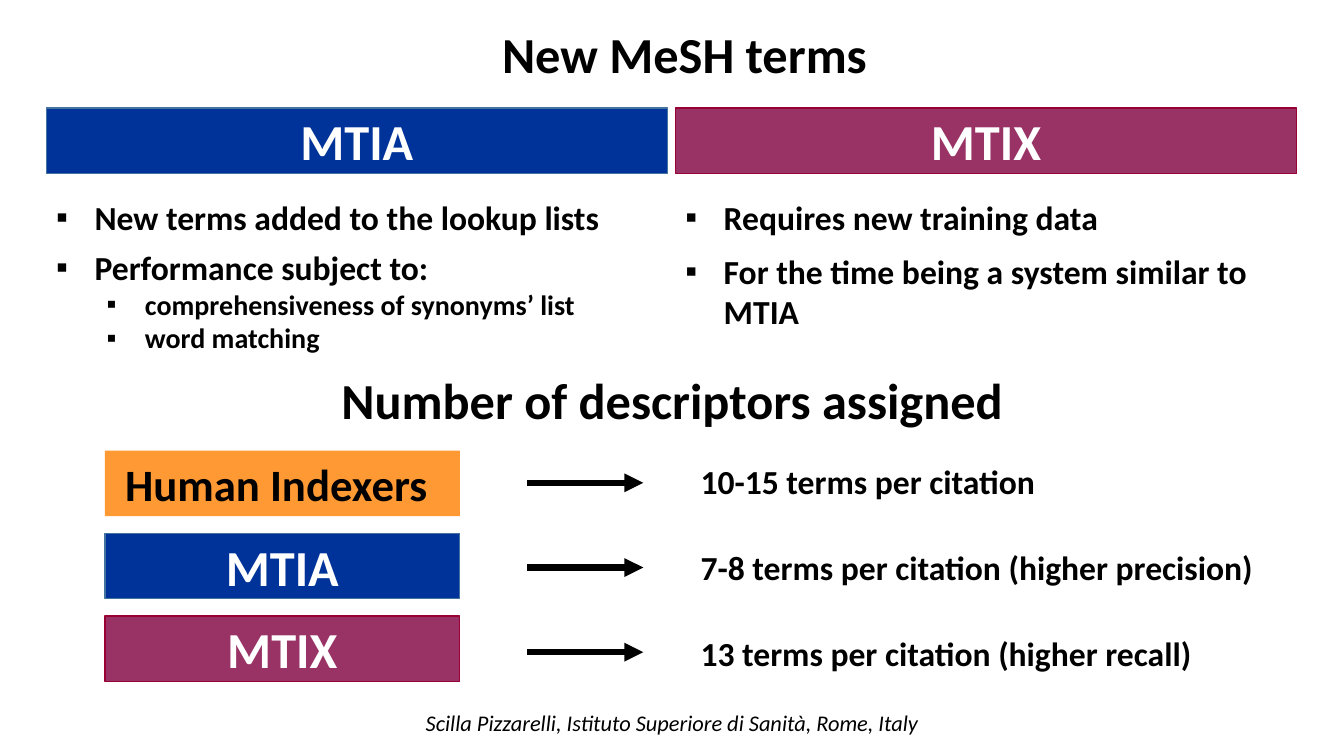
"""Build a slide comparing MTIA and MTIX on new MeSH terms and descriptors."""
from lxml.etree import SubElement
from pptx import Presentation
from pptx.dml.color import RGBColor
from pptx.enum.shapes import MSO_CONNECTOR, MSO_SHAPE
from pptx.enum.text import MSO_ANCHOR, PP_ALIGN
from pptx.oxml.ns import qn
from pptx.util import Inches, Pt

BLACK = RGBColor(0x00, 0x00, 0x00)
WHITE = RGBColor(0xFF, 0xFF, 0xFF)
BLUE = RGBColor(0x00, 0x33, 0x99)
BLUE_EDGE = RGBColor(0x43, 0x73, 0x9E)
PLUM = RGBColor(0x99, 0x33, 0x66)
PLUM_EDGE = RGBColor(0x99, 0x00, 0x33)
ORANGE = RGBColor(0xFF, 0x99, 0x33)

SLIDE_WIDTH, SLIDE_HEIGHT = 13.33, 7.5
MTIA_LEFT, MTIX_LEFT, COLUMN_WIDTH = 0.46, 6.7, 6.16
BAND_TOP, BAND_HEIGHT = 1.07, 0.65
BULLETS_TOP = 1.9
METHOD_LEFT, METHOD_WIDTH = 1.04, 3.52
ARROW_LEFT, ARROW_RIGHT = 5.23, 6.38
COUNT_LEFT, COUNT_WIDTH = 6.85, 6.34
ROWS_TOP, ROW_PITCH = 4.47, 0.82
ARROW_TOP, ARROW_PITCH = 4.79, 0.84
COUNT_TOP, COUNT_PITCH = 4.52, 0.855

METHODS = [
    ("Human Indexers", 32, BLACK, ORANGE, None, "10-15 terms per citation"),
    ("MTIA", 36, WHITE, BLUE, BLUE_EDGE, "7-8 terms per citation (higher precision)"),
    ("MTIX", 36, WHITE, PLUM, PLUM_EDGE, "13 terms per citation (higher recall)"),
]


def inches(*lengths):
    """Convert lengths to slide units."""
    return [Inches(length) for length in lengths]


def write(paragraph, wording, size, color=BLACK, bold=True, italic=False):
    """Add one styled run to a paragraph."""
    run = paragraph.add_run()
    run.text = wording
    run.font.name = "Calibri"
    run.font.size = Pt(size)
    run.font.bold = bold
    run.font.italic = italic
    run.font.color.rgb = color


def add_frame(slide, left, top, width, height, anchor=MSO_ANCHOR.TOP):
    """Add a wrapping text box and return its text frame."""
    frame = slide.shapes.add_textbox(*inches(left, top, width, height)).text_frame
    frame.word_wrap = True
    frame.vertical_anchor = anchor
    return frame


def add_heading(slide, left, top, wording):
    """Add a large centred heading."""
    heading = add_frame(slide, left, top, 11.5, 0.91, MSO_ANCHOR.MIDDLE).paragraphs[0]
    heading.alignment = PP_ALIGN.CENTER
    heading.line_spacing = 0.9
    write(heading, wording, 36)


def add_band(slide, left, top, width, wording, size, color, fill, edge):
    """Add a filled label; one without an edge is aligned left."""
    band = slide.shapes.add_shape(
        MSO_SHAPE.RECTANGLE, *inches(left, top, width, BAND_HEIGHT))
    band.shadow.inherit = False
    band.fill.solid()
    band.fill.fore_color.rgb = fill
    label = band.text_frame.paragraphs[0]
    band.text_frame.vertical_anchor = MSO_ANCHOR.MIDDLE
    if edge is None:
        band.line.fill.background()
        band.text_frame.margin_left = Inches(0.2)
        label.alignment = PP_ALIGN.LEFT
    else:
        band.line.color.rgb = edge
        band.line.width = Pt(1)
        label.alignment = PP_ALIGN.CENTER
    write(label, wording, size, color)


def add_bullets(slide, left, top, height, points):
    """Add square-bulleted points given as (level, wording) pairs."""
    frame = add_frame(slide, left, top, COLUMN_WIDTH, height)
    for index, (level, wording) in enumerate(points):
        point = frame.add_paragraph() if index else frame.paragraphs[0]
        point.level = level
        properties = point._p.get_or_add_pPr()
        properties.set("marL", str(Inches(0.38 + 0.5 * level)))
        properties.set("indent", str(Inches(-0.38)))
        SubElement(properties, qn("a:buFont"), typeface="Arial")
        SubElement(properties, qn("a:buChar"), char="▪")
        write(point, wording, 24 - 4 * level)


def add_arrow(slide, top):
    """Add a horizontal arrow from a method to its count."""
    arrow = slide.shapes.add_connector(
        MSO_CONNECTOR.STRAIGHT, *inches(ARROW_LEFT, top, ARROW_RIGHT, top))
    arrow.line.color.rgb = BLACK
    arrow.line.width = Pt(4.5)
    SubElement(arrow.line._get_or_add_ln(), qn("a:tailEnd"), type="triangle")
    SubElement(arrow._element.spPr, qn("a:effectLst"))


def add_method(slide, row, wording, size, color, fill, edge, count):
    """Add one row: method label, arrow and terms per citation."""
    add_band(slide, METHOD_LEFT, ROWS_TOP + row * ROW_PITCH, METHOD_WIDTH,
             wording, size, color, fill, edge)
    add_arrow(slide, ARROW_TOP + row * ARROW_PITCH)
    frame = add_frame(slide, COUNT_LEFT, COUNT_TOP + row * COUNT_PITCH, COUNT_WIDTH, 0.5)
    write(frame.paragraphs[0], count, 24)


def main():
    """Assemble and save the slide."""
    deck = Presentation()
    deck.slide_width, deck.slide_height = inches(SLIDE_WIDTH, SLIDE_HEIGHT)
    slide = deck.slides.add_slide(deck.slide_layouts[6])

    add_heading(slide, 1.04, 0.11, "New MeSH terms")
    for left, (wording, size, color, fill, edge, _) in zip(
            (MTIA_LEFT, MTIX_LEFT), METHODS[1:]):
        add_band(slide, left, BAND_TOP, COLUMN_WIDTH, wording, size, color, fill, edge)
    add_bullets(slide, MTIA_LEFT, BULLETS_TOP, 0.5,
                [(0, "New terms added to the lookup lists")])
    add_bullets(slide, MTIA_LEFT, BULLETS_TOP + 0.5, 1.21,
                [(0, "Performance subject to:"),
                 (1, "comprehensiveness of synonyms’ list"),
                 (1, "word matching")])
    add_bullets(slide, MTIX_LEFT, BULLETS_TOP, 0.5, [(0, "Requires new training data")])
    add_bullets(slide, MTIX_LEFT, BULLETS_TOP + 0.54, 0.91,
                [(0, "For the time being a system similar to MTIA")])

    add_heading(slide, 0.92, 3.54, "Number of descriptors assigned")
    for row, method in enumerate(METHODS):
        add_method(slide, row, *method)

    credit = add_frame(slide, 0, 6.99, SLIDE_WIDTH, 0.37).paragraphs[0]
    credit.alignment = PP_ALIGN.CENTER
    write(credit, "Scilla Pizzarelli, Istituto Superiore di Sanità, Rome, Italy",
          16, bold=False, italic=True)
    deck.save("out.pptx")


if __name__ == "__main__":
    main()
